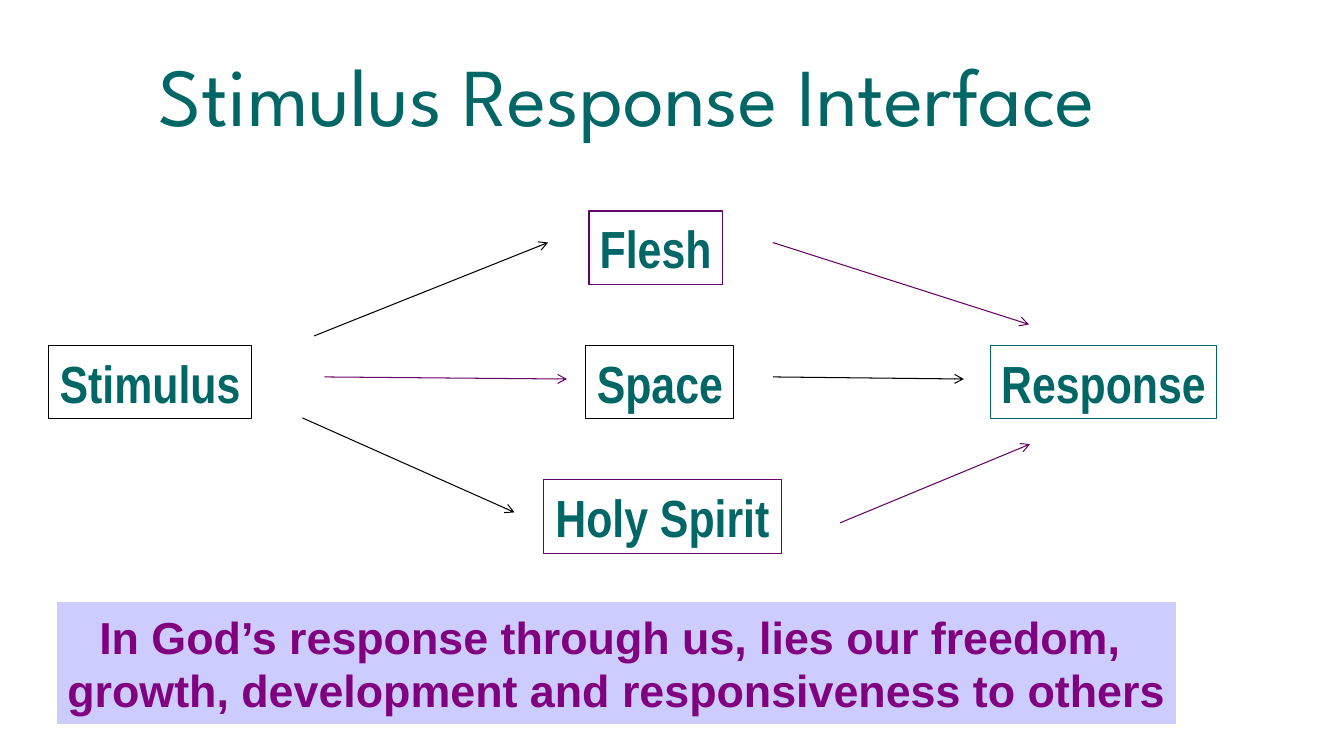
"""Build the Stimulus Response Interface slide."""
from pptx import Presentation
from pptx import util as u
from pptx.dml.color import RGBColor
from pptx.enum import shapes, text
from pptx.oxml.ns import qn
from lxml import etree

PX = 9525
TEAL, PURPLE, BLACK = "006666", "660066", "000000"
ROW_TOP, ROW_STEP, BOX_HEIGHT = 201, 128, 70


def color(value):
    return RGBColor.from_string(value)


def write(shape, content, font_name, size, font_color, bold):
    frame = shape.text_frame
    frame.text = content
    frame.vertical_anchor = text.MSO_ANCHOR.MIDDLE
    paragraph = frame.paragraphs[0]
    paragraph.alignment = text.PP_ALIGN.CENTER
    for run in paragraph.runs:
        run.font.name = font_name
        run.font.size = u.Pt(size)
        run.font.bold = bold
        run.font.color.rgb = color(font_color)


presentation = Presentation()
presentation.slide_width = 1280 * PX
presentation.slide_height = 720 * PX
slide = presentation.slides.add_slide(presentation.slide_layouts[6])

title = slide.shapes.add_textbox(21 * PX, 29 * PX, 1152 * PX, 120 * PX)
title.text_frame.word_wrap = True
write(title, "Stimulus Response Interface", "League Spartan", 58.7, TEAL, False)

boxes = [
    ("Stimulus", 46, 1, 194, BLACK),
    ("Flesh", 561, 0, 127, PURPLE),
    ("Space", 558, 1, 141, BLACK),
    ("Holy Spirit", 518, 2, 226, PURPLE),
    ("Response", 943, 1, 216, TEAL),
]
for label, left, row, width, line_color in boxes:
    top = ROW_TOP + row * ROW_STEP
    box = slide.shapes.add_shape(
        shapes.MSO_SHAPE.RECTANGLE, left * PX, top * PX, width * PX, BOX_HEIGHT * PX)
    box.shadow.inherit = False
    box.fill.background()
    box.line.color.rgb = color(line_color)
    box.line.width = u.Pt(0.75)
    box.text_frame.word_wrap = False
    write(box, label, "Arial Narrow", 37.3, TEAL, True)

arrows = [
    (299, 320, 522, 231, BLACK),
    (309, 359, 540, 361, PURPLE),
    (288, 398, 490, 488, BLACK),
    (736, 231, 980, 309, PURPLE),
    (736, 359, 918, 361, BLACK),
    (800, 498, 981, 423, PURPLE),
]
for start_x, start_y, end_x, end_y, line_color in arrows:
    arrow = slide.shapes.add_connector(
        shapes.MSO_CONNECTOR.STRAIGHT, start_x * PX, start_y * PX, end_x * PX, end_y * PX)
    arrow.line.color.rgb = color(line_color)
    arrow.line.width = u.Pt(0.75)
    etree.SubElement(arrow.line._get_or_add_ln(), qn("a:tailEnd"), type="arrow")
    etree.SubElement(arrow._element.spPr, qn("a:effectLst"))

banner = slide.shapes.add_shape(
    shapes.MSO_SHAPE.RECTANGLE, 54 * PX, 573 * PX, 1067 * PX, 117 * PX)
banner.shadow.inherit = False
banner.fill.solid()
banner.fill.fore_color.rgb = color("CCCCFF")
banner.line.color.rgb = color("FFFFFF")
banner.line.width = u.Pt(1)
banner.text_frame.word_wrap = False
write(banner,
      "In God’s response through us, lies our freedom, \v"
      "growth, development and responsiveness to others",
      "Arial", 32, "800080", True)

presentation.save("out.pptx")
